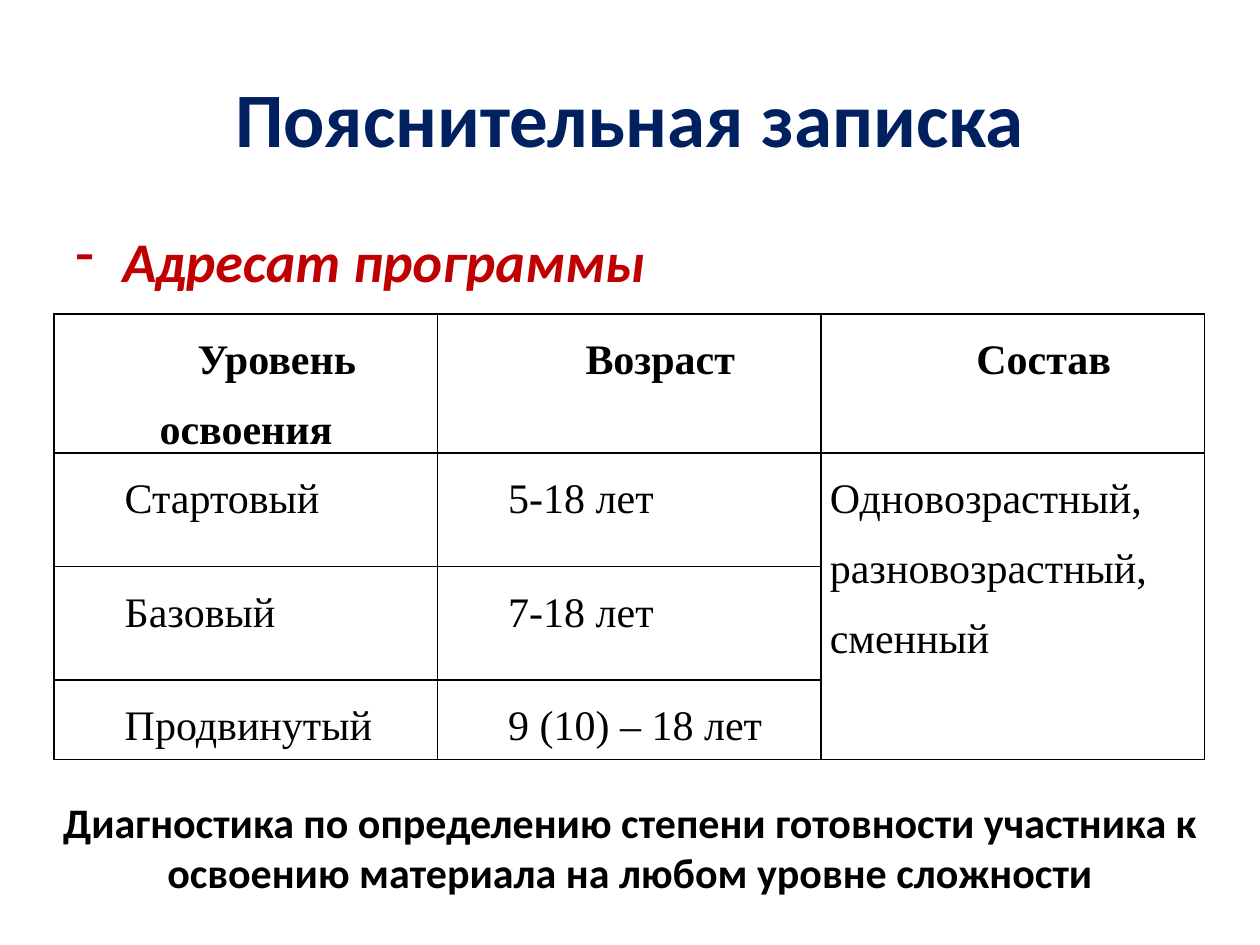
from lxml import etree
from pptx import Presentation
from pptx import util as u
from pptx.dml.color import RGBColor
from pptx.enum import text
from pptx.oxml import ns

COLORS = {"title": "002060", "accent": "C00000", "ink": "000000"}
CENTER, LEFT = text.PP_ALIGN.CENTER, text.PP_ALIGN.LEFT
SIDES = ("lnL", "lnR", "lnT", "lnB")
HEADER = ("Уровень освоения", "Возраст", "Состав")
LEVELS = (
    ("Стартовый", "5-18 лет"),
    ("Базовый", "7-18 лет"),
    ("Продвинутый", "9 (10) – 18 лет"),
)
GROUPS = "Одновозрастный, разновозрастный, сменный"


class Page:
    """Holds the style and the current slide, measured on a grid of 100 columns by 75 rows."""

    def __init__(self, deck):
        self.column = deck.slide_width / 100
        self.row = deck.slide_height / 75
        self.slide = deck.slides.add_slide(deck.slide_layouts[6])

    def across(self, columns):
        return u.Emu(round(columns * self.column))

    def down(self, rows):
        return u.Emu(round(rows * self.row))

    def place(self, left, top, width, height):
        return self.across(left), self.down(top), self.across(width), self.down(height)

    def apply(self, target, values):
        for name, value in values.items():
            setattr(target, name, value)

    def paragraph(self, frame, words, size, color="ink", face="Calibri", indent=None,
                  bullet=None, layout=None, **font):
        para = frame.paragraphs[0]
        self.apply(para, layout or {})
        span = para.add_run()
        span.text = words
        self.apply(span.font, {"size": u.Pt(size), "name": face, **font})
        span.font.color.rgb = RGBColor.from_string(COLORS[color])
        properties = para._p.get_or_add_pPr()
        if indent:
            margin, first = indent
            properties.set("marL", str(self.across(margin)))
            properties.set("indent", str(self.across(first)))
        if bullet:
            etree.SubElement(properties, ns.qn("a:buChar"), char=bullet)

    def text(self, area, words, size, anchor=text.MSO_ANCHOR.TOP,
             fit=text.MSO_AUTO_SIZE.NONE, **style):
        box = self.slide.shapes.add_textbox(*self.place(*area))
        self.apply(box.text_frame, {"word_wrap": True, "vertical_anchor": anchor, "auto_size": fit})
        self.paragraph(box.text_frame, words, size, **style)

    def border(self, cell):
        properties = cell._tc.get_or_add_tcPr()
        for position, side in enumerate(SIDES):
            line = etree.Element(ns.qn(f"a:{side}"), w=str(u.Pt(1)))
            fill = etree.SubElement(line, ns.qn("a:solidFill"))
            etree.SubElement(fill, ns.qn("a:srgbClr"), val=COLORS["ink"])
            properties.insert(position, line)

    def cell(self, cell, words, align=LEFT, first=4.9, bold=False):
        inset = self.across(0.7)
        self.apply(cell, {"margin_left": inset, "margin_right": inset,
                          "margin_top": 0, "margin_bottom": 0})
        self.paragraph(cell.text_frame, words, 24, face="Times New Roman", bold=bold,
                       indent=(0, first), layout={"alignment": align, "line_spacing": 1.5})

    def table(self, area, heights, header, levels, groups):
        frame = self.slide.shapes.add_table(len(heights), len(header), *self.place(*area))
        table = frame.table
        self.apply(table, {"first_row": False, "horz_banding": False})
        for row, height in zip(table.rows, heights):
            row.height = self.down(height)
        for cell in table.iter_cells():
            cell.fill.background()
            self.border(cell)
        for column, words in enumerate(header):
            self.cell(table.cell(0, column), words, CENTER, bold=True)
        for row, level in enumerate(levels, 1):
            for column, words in enumerate(level):
                self.cell(table.cell(row, column), words)
        last = len(header) - 1
        shared = table.cell(1, last)
        shared.merge(table.cell(len(levels), last))
        self.cell(shared, groups, first=0)


def main():
    deck = Presentation()
    deck.slide_width, deck.slide_height = u.Inches(10), u.Inches(7.5)
    page = Page(deck)
    page.text((5, 3, 90, 12.5), "Пояснительная записка", 44, text.MSO_ANCHOR.MIDDLE,
              color="title", bold=True, layout={"alignment": CENTER})
    page.text((5, 17.5, 90, 49.5), "Адресат программы", 32, color="accent", bold=True,
              italic=True, indent=(3.75, -3.75), bullet="-", layout={"space_before": u.Pt(6.4)})
    page.table((4.3, 24.9, 91.3, 36.2), (11, 9, 9, 6.3), HEADER, LEVELS, GROUPS)
    page.text((0, 62.7, 100, 9.1),
              "Диагностика по определению степени готовности участника к "
              "освоению материала на любом уровне сложности",
              24, fit=text.MSO_AUTO_SIZE.SHAPE_TO_FIT_TEXT, bold=True,
              layout={"alignment": CENTER})
    deck.save("out.pptx")


if __name__ == "__main__":
    main()
